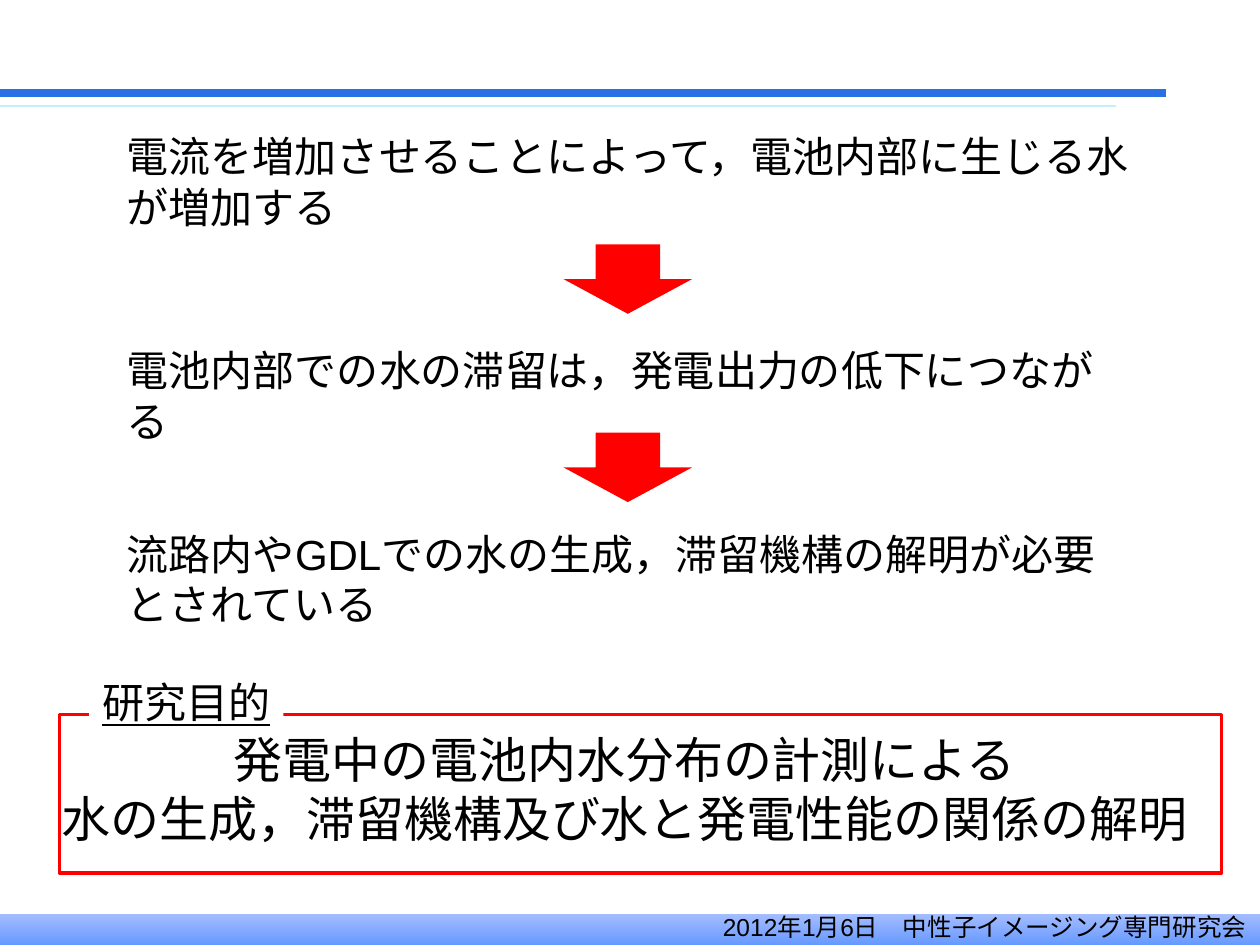
from pptx import Presentation
from pptx import util as u
from pptx.dml import color
from pptx.enum import shapes, text
from pptx.oxml import ns
from lxml import etree


def rgb(value):
    return color.RGBColor.from_string(value)


def write(shape, lines, size, align, underline=None):
    frame = shape.text_frame
    frame_format = {"word_wrap": True, "auto_size": text.MSO_AUTO_SIZE.SHAPE_TO_FIT_TEXT,
                    "vertical_anchor": text.MSO_ANCHOR.TOP}
    for name, value in frame_format.items():
        setattr(frame, name, value)
    for index, line in enumerate(lines):
        para = frame.paragraphs[0] if index == 0 else frame.add_paragraph()
        para.alignment = align
        span = para.add_run()
        span.text = line
        for name, value in {"size": u.Pt(size), "name": "Arial", "underline": underline}.items():
            setattr(span.font, name, value)
        span.font.color.rgb = rgb("000000")


LEFT, CENTER, RIGHT = text.PP_ALIGN.LEFT, text.PP_ALIGN.CENTER, text.PP_ALIGN.RIGHT

deck = Presentation()
deck.slide_width, deck.slide_height = u.Pt(720), u.Pt(540)
slide = deck.slides.add_slide(deck.slide_layouts[6])
items = slide.shapes

for length, top, line_color, width in [(666.5, 53.4, "2870E4", 4.5), (638, 60.5, "C3EEFD", 0.75)]:
    rule = items.add_connector(shapes.MSO_CONNECTOR.STRAIGHT, 0, u.Pt(top), u.Pt(length), u.Pt(top))
    rule.line.color.rgb = rgb(line_color)
    rule.line.width = u.Pt(width)
    etree.SubElement(rule.element.spPr, ns.qn("a:effectLst"))

footer_band = items.add_shape(shapes.MSO_SHAPE.RECTANGLE, 0, u.Pt(522), u.Pt(720), u.Pt(18))
footer_band.shadow.inherit = False
footer_band.line.fill.background()
footer_band.fill.gradient()
footer_band.fill.gradient_angle = 270
for stop, stop_color in zip(footer_band.fill.gradient_stops, ["A6BEFF", "6699FF"]):
    stop.color.rgb = rgb(stop_color)

footer = items.add_textbox(u.Pt(226), u.Pt(517.5), u.Pt(493.4), u.Pt(24.2))
write(footer, ["2012年1月6日　中性子イメージング専門研究会"], 14, RIGHT)

steps = [
    (71.2, 65.4, "電流を増加させることによって，電池内部に生じる水が増加する"),
    (193.5, 36.4, "電池内部での水の滞留は，発電出力の低下につながる"),
    (298.3, 65.4, "流路内やGDLでの水の生成，滞留機構の解明が必要とされている"),
]
for top, height, sentence in steps:
    box = items.add_textbox(u.Pt(65.5), u.Pt(top), u.Pt(587), u.Pt(height))
    write(box, [sentence], 24, LEFT)

for top in (139.6, 247.2):
    arrow = items.add_shape(shapes.MSO_SHAPE.DOWN_ARROW, u.Pt(322), u.Pt(top), u.Pt(73.6), u.Pt(39.7))
    arrow.shadow.inherit = False
    arrow.fill.solid()
    arrow.fill.fore_color.rgb = rgb("FF0000")
    arrow.line.fill.background()

purpose = items.add_textbox(u.Pt(22.3), u.Pt(413.2), u.Pt(669), u.Pt(74.2))
write(purpose, ["発電中の電池内水分布の計測による",
                "水の生成，滞留機構及び水と発電性能の関係の解明"], 28, CENTER)

frame_box = items.add_shape(shapes.MSO_SHAPE.RECTANGLE, u.Pt(34), u.Pt(408.2), u.Pt(664), u.Pt(90.8))
frame_box.shadow.inherit = False
frame_box.fill.background()
frame_box.line.color.rgb = rgb("FF0000")
frame_box.line.width = u.Pt(2)

label = items.add_shape(shapes.MSO_SHAPE.RECTANGLE, u.Pt(51), u.Pt(383), u.Pt(111), u.Pt(36.4))
label.shadow.inherit = False
label.fill.solid()
label.fill.fore_color.rgb = rgb("FFFFFF")
label.line.fill.background()
write(label, ["研究目的"], 24, CENTER, True)

deck.save("out.pptx")
